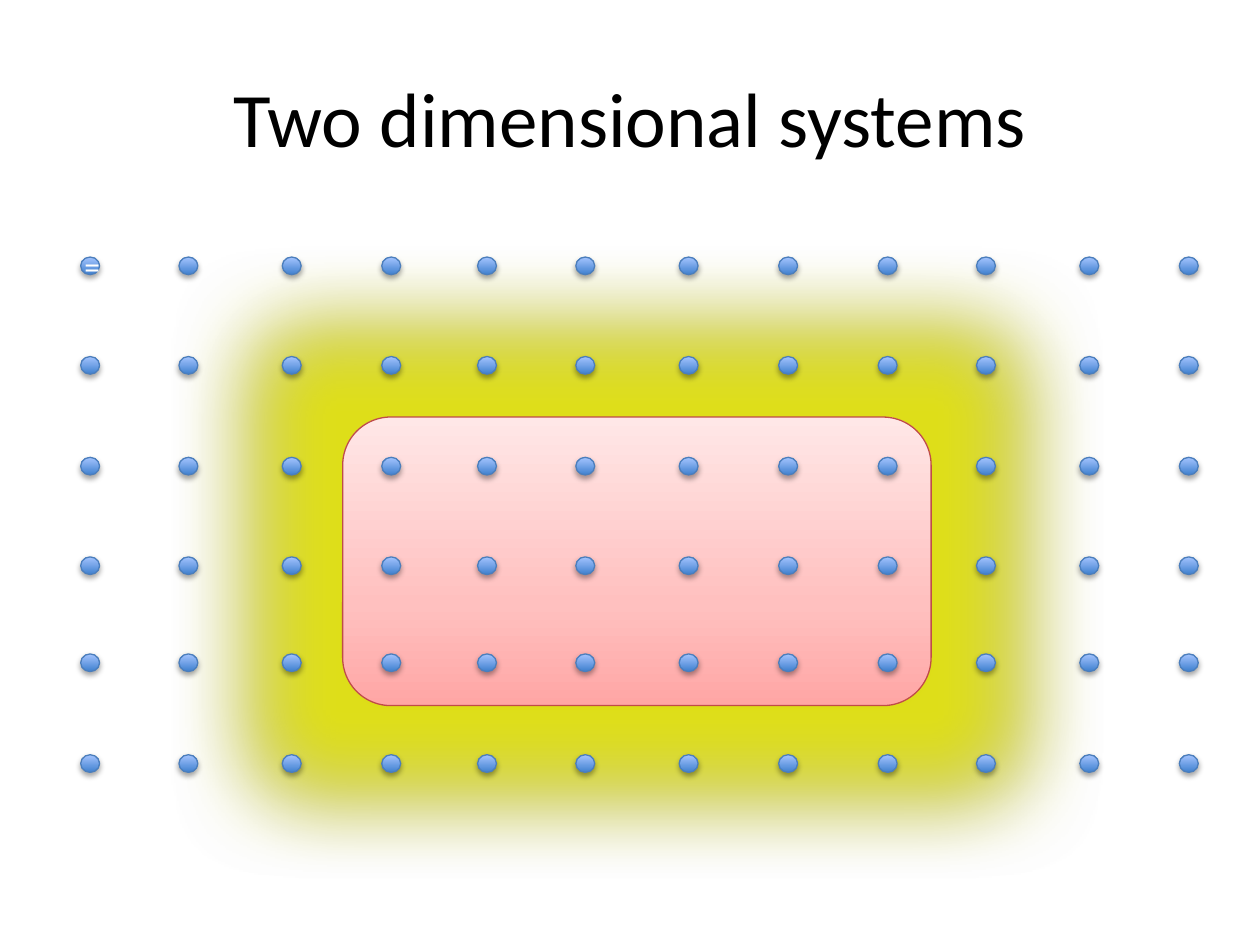
import pptx
import pptx.dml.color
import pptx.enum.shapes
import pptx.enum.text
import pptx.oxml
import pptx.oxml.ns
import pptx.util
from pptx.util import Inches

SHAPES = pptx.enum.shapes.MSO_SHAPE
NS = pptx.oxml.ns.nsdecls("a")


def rgb(hex_colour):
    return pptx.dml.color.RGBColor.from_string(hex_colour)


def shade(shape, stops, outline, shadow_alpha, shadow_distance, glow=""):
    """Give a vertical gradient (stops run from the bottom up), a thin outline and a soft shadow."""
    shape.fill.gradient()
    shape.fill.gradient_angle = 90
    stop_list = shape.fill._fill._gradFill.find(pptx.oxml.ns.qn("a:gsLst"))
    stop_list.clear()
    for percent, colour in stops:
        stop_list.append(pptx.oxml.parse_xml(
            f'<a:gs {NS} pos="{percent * 1000}"><a:srgbClr val="{colour}"/></a:gs>'))
    shape.line.color.rgb = rgb(outline)
    shape.line.width = pptx.util.Pt(0.75)
    shape.shadow.inherit = False
    effects = shape._element.spPr.find(pptx.oxml.ns.qn("a:effectLst"))
    if glow:
        effects.append(pptx.oxml.parse_xml(
            f'<a:glow {NS} rad="{pptx.util.Pt(100)}"><a:srgbClr val="{glow}">'
            '<a:alpha val="85000"/></a:srgbClr></a:glow>'))
    effects.append(pptx.oxml.parse_xml(
        f'<a:outerShdw {NS} blurRad="{pptx.util.Pt(3.1)}" '
        f'dist="{pptx.util.Pt(shadow_distance)}" dir="5400000" rotWithShape="0">'
        f'<a:srgbClr val="000000"><a:alpha val="{shadow_alpha * 1000}"/>'
        '</a:srgbClr></a:outerShdw>'))


prs = pptx.Presentation()
prs.slide_width, prs.slide_height = Inches(10), Inches(7.5)
slide = prs.slides.add_slide(prs.slide_layouts[5])

title = slide.shapes.title
title.left, title.top = Inches(0.5), Inches(0.3)
title.width, title.height = Inches(9), Inches(1.25)
title.text_frame.vertical_anchor = pptx.enum.text.MSO_ANCHOR.MIDDLE
heading = title.text_frame.paragraphs[0]
heading.alignment = pptx.enum.text.PP_ALIGN.CENTER
heading_run = heading.add_run()
heading_run.text = "Two dimensional systems"
heading_run.font.size = pptx.util.Pt(44)
heading_run.font.name = "Calibri"
heading_run.font.color.rgb = rgb("000000")

# Highlighted block of lattice sites with its surrounding glow
block = slide.shapes.add_shape(
    SHAPES.ROUNDED_RECTANGLE, Inches(2.72), Inches(3.31), Inches(4.67), Inches(2.29))
shade(block, [(0, "FFA6A5"), (35, "FFC0BF"), (100, "FFE7E7")], "BF4C48", 38, 1.6, "E8E800")

# Lattice of sites
COLUMNS = [0.64, 1.42, 2.24, 3.03, 3.79, 4.57, 5.39, 6.18, 6.97, 7.75, 8.57, 9.36]
ROWS = [2.04, 2.83, 3.63, 4.42, 5.19, 5.99]
sites = []
for y in ROWS:
    for x in COLUMNS:
        site = slide.shapes.add_shape(
            SHAPES.OVAL, Inches(x), Inches(y), Inches(0.15), Inches(0.14))
        shade(site, [(0, "3F80CE"), (100, "A4C4FF")], "4B7EBC", 35, 1.8)
        sites.append(site)

corner_frame = sites[0].text_frame
corner_frame.vertical_anchor = pptx.enum.text.MSO_ANCHOR.MIDDLE
corner_label = corner_frame.paragraphs[0]
corner_label.alignment = pptx.enum.text.PP_ALIGN.CENTER
corner_run = corner_label.add_run()
corner_run.text = "="
corner_run.font.size = pptx.util.Pt(18)
corner_run.font.name = "Calibri"
corner_run.font.color.rgb = rgb("FFFFFF")

prs.save("out.pptx")
